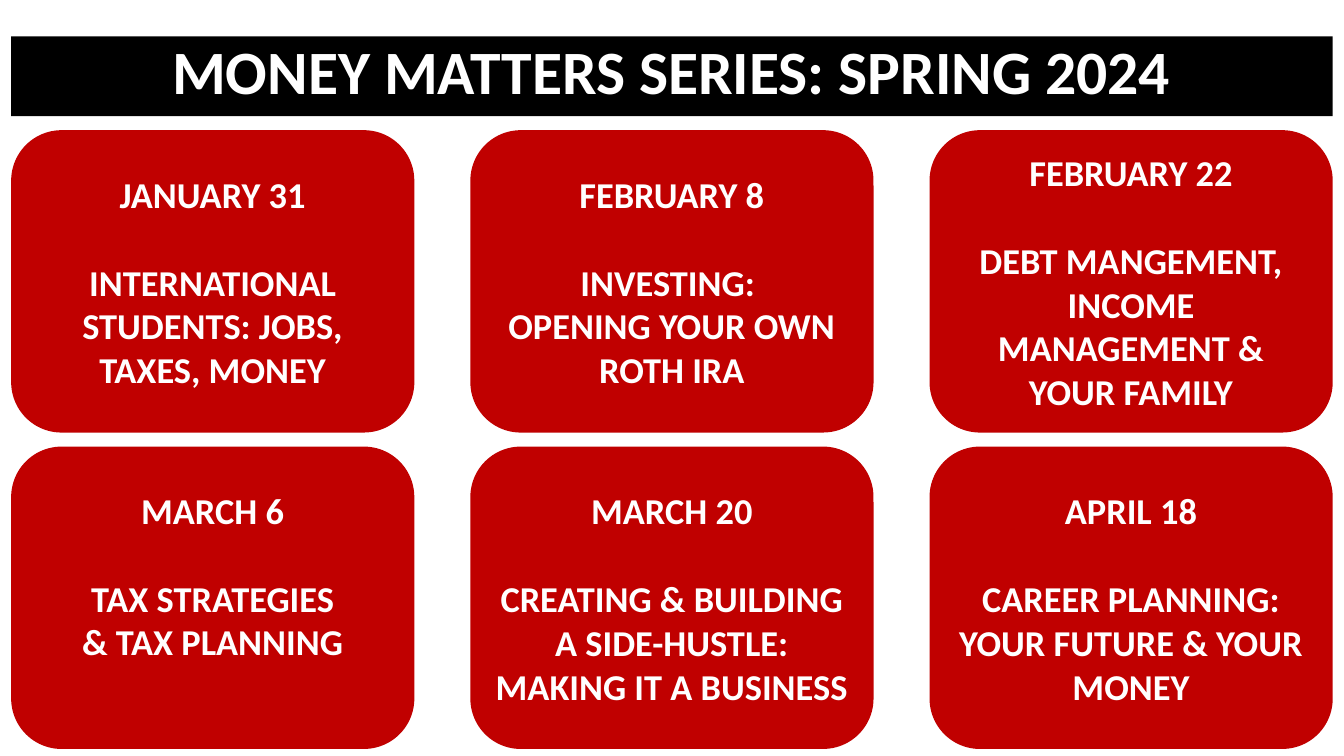
"""Build the Money Matters Series schedule slide."""
from pptx import Presentation
from pptx import util as u
from pptx.dml import color
from pptx.enum import shapes, text

TITLE = "MONEY MATTERS SERIES: SPRING 2024"
SESSIONS = [
    ("JANUARY 31", "INTERNATIONAL STUDENTS: JOBS, TAXES, MONEY"),
    ("FEBRUARY 8", "INVESTING: \nOPENING YOUR OWN ROTH IRA"),
    ("FEBRUARY 22", "DEBT MANGEMENT, INCOME MANAGEMENT & YOUR FAMILY"),
    ("MARCH 6", "TAX STRATEGIES\n& TAX PLANNING"),
    ("MARCH 20", "CREATING & BUILDING A SIDE-HUSTLE: MAKING IT A BUSINESS"),
    ("APRIL 18", "CAREER PLANNING: YOUR FUTURE & YOUR MONEY"),
]
SHORT_SESSION = "MARCH 6"
BLACK, RED, WHITE = "000000", "C00000", "FFFFFF"
LEFT, COLUMNS = 8, 3
BANNER_TOP, BANNER_WIDTH, BANNER_HEIGHT = 26, 944, 57
CARD_TOP, CARD_WIDTH, CARD_HEIGHT = 93, 288, 216
COLUMN_STEP, ROW_STEP = 328, 226
LINE_HEIGHT = 31.7


def paint(fill, hex_color):
    fill.solid()
    fill.fore_color.rgb = color.RGBColor.from_string(hex_color)


def add_panel(slide, preset, box, fill, lines, size):
    panel = slide.shapes.add_shape(preset, *(u.Pt(length) for length in box))
    panel.shadow.inherit = False
    paint(panel.fill, fill)
    panel.line.fill.background()
    frame = panel.text_frame
    frame.word_wrap = True
    for index, line in enumerate(lines):
        paragraph = frame.add_paragraph() if index else frame.paragraphs[0]
        paragraph.text = line
        paragraph.alignment = text.PP_ALIGN.CENTER
        if index:
            paragraph.space_before = u.Pt(LINE_HEIGHT)
        font = paragraph.font
        font.name, font.size, font.bold = "Calibri", u.Pt(size), True
        paint(font.fill, WHITE)
    return frame


def main():
    deck = Presentation()
    deck.slide_width, deck.slide_height = u.Pt(960), u.Pt(540)
    slide = deck.slides.add_slide(deck.slide_layouts[6])

    banner = add_panel(slide, shapes.MSO_SHAPE.RECTANGLE,
                       (LEFT, BANNER_TOP, BANNER_WIDTH, BANNER_HEIGHT),
                       BLACK, [TITLE], 44)
    banner.vertical_anchor = text.MSO_ANCHOR.TOP
    banner.paragraphs[0].line_spacing = 0.9

    for index, session in enumerate(SESSIONS):
        row, column = divmod(index, COLUMNS)
        box = (LEFT + column * COLUMN_STEP, CARD_TOP + row * ROW_STEP,
               CARD_WIDTH, CARD_HEIGHT)
        card = add_panel(slide, shapes.MSO_SHAPE.ROUNDED_RECTANGLE,
                         box, RED, session, 26)
        card.vertical_anchor = text.MSO_ANCHOR.MIDDLE
        if session[0] == SHORT_SESSION:
            card.margin_bottom = u.Pt(3.6 + LINE_HEIGHT)

    deck.save("out.pptx")


if __name__ == "__main__":
    main()
